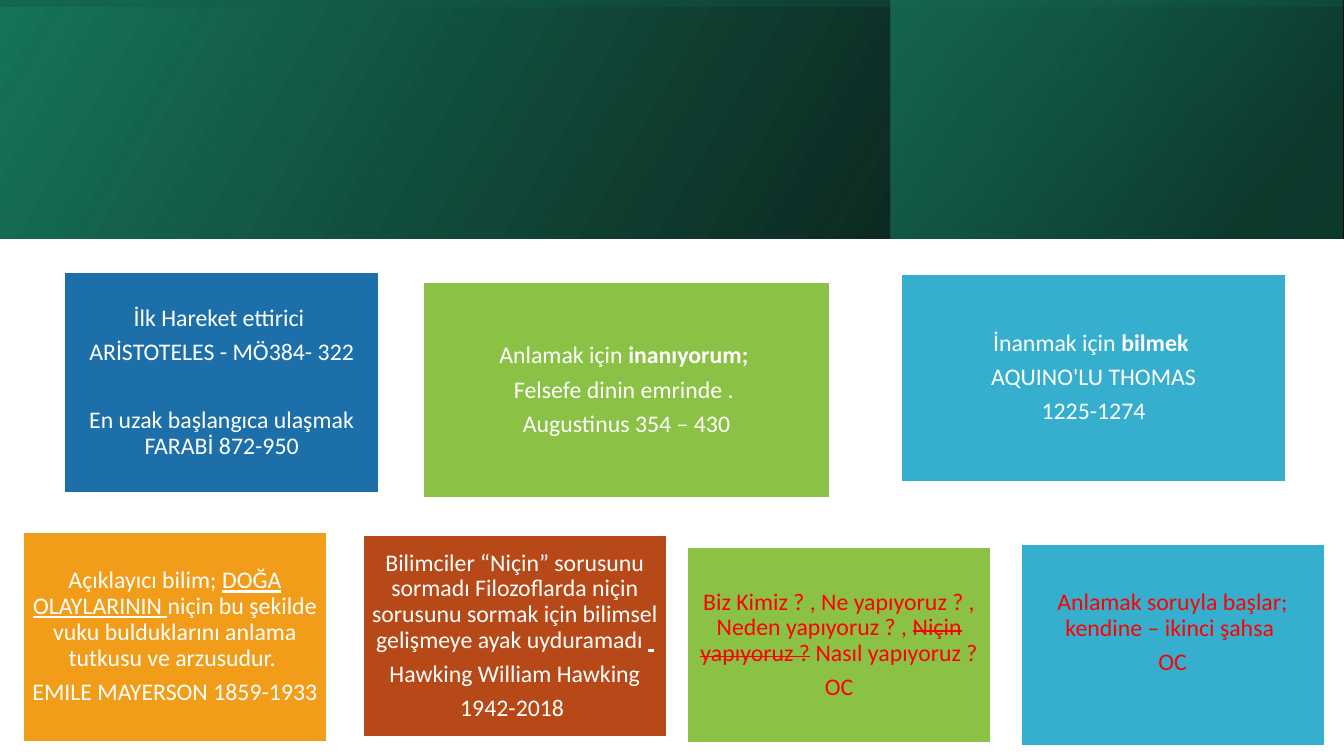
"""Builds a slide of seven coloured thinker cards under a green gradient banner."""
from lxml import etree
from pptx import Presentation
from pptx.dml.color import RGBColor
from pptx.enum.shapes import MSO_SHAPE
from pptx.enum.text import MSO_ANCHOR, PP_ALIGN
from pptx.oxml.ns import qn
from pptx.util import Pt

RECT = MSO_SHAPE.RECTANGLE
MIDDLE = MSO_ANCHOR.MIDDLE
CENTER = PP_ALIGN.CENTER

WHITE = RGBColor(0xFF, 0xFF, 0xFF)
BLACK = RGBColor(0x00, 0x00, 0x00)
RED = RGBColor(0xFF, 0x00, 0x00)
GREEN = RGBColor(0x8B, 0xC1, 0x45)
CYAN = RGBColor(0x36, 0xAF, 0xCE)
BLUE = RGBColor(0x1D, 0x6F, 0xA9)
RUST = RGBColor(0xB7, 0x49, 0x19)
ORANGE = RGBColor(0xF1, 0x9D, 0x19)
TEAL = RGBColor(0x16, 0x74, 0x5A)
DARK_TEAL = RGBColor(0x0E, 0x4D, 0x3C)
LIGHT_TEAL = RGBColor(0x1D, 0x9A, 0x78)

SLIDE_W, SLIDE_H = 960, 540
BANNER_H = 170.6
LOWER_W = 216.8
BOLD, UNDERLINE, STRIKE = "bold", "underline", "strike"


class Deck:
    """Holds the text style and the current slide."""

    font = "Calibri"
    size = 17
    inset = 5
    gap = 6

    def __init__(self, prs):
        """Add a blank slide to the presentation."""
        self.s = prs.slides.add_slide(prs.slide_layouts[6])

    def rect(self, box):
        """Add a rectangle without shadow."""
        sp = self.s.shapes.add_shape(RECT, *(Pt(v) for v in box))
        sp.shadow.inherit = False
        return sp

    def band(self, box, angle, stops, rotation=0):
        """Add a mirrored band with a translucent two-stop gradient."""
        sp = self.rect(box)
        sp.line.fill.background()
        sp.rotation = rotation
        sp._element.spPr.find(qn("a:xfrm")).set("flipH", "1")
        sp.fill.gradient()
        sp.fill.gradient_angle = angle
        for stop, (position, color, _) in zip(sp.fill.gradient_stops, stops):
            stop.position = position
            stop.color.rgb = color
        colors = sp._element.spPr.iter(qn("a:srgbClr"))
        for clr, (_, _, opacity) in zip(list(colors), stops):
            alpha = etree.SubElement(clr, qn("a:alpha"))
            alpha.set("val", str(opacity * 1000))

    def card(self, box, fill, paragraphs, color=WHITE, extra_gap=None, lift=0):
        """Add a filled card; extra_gap maps a paragraph index to space after."""
        sp = self.rect(box)
        sp.fill.solid()
        sp.fill.fore_color.rgb = fill
        sp.line.color.rgb = WHITE
        sp.line.width = Pt(1)
        tf = sp.text_frame
        tf.word_wrap = True
        tf.vertical_anchor = MIDDLE
        tf.margin_left = tf.margin_right = tf.margin_top = Pt(self.inset)
        tf.margin_bottom = Pt(self.inset + lift)
        for i, runs in enumerate(paragraphs):
            p = tf.paragraphs[0] if i == 0 else tf.add_paragraph()
            p.alignment = CENTER
            p.line_spacing = 0.9
            p.space_after = Pt((extra_gap or {}).get(i, self.gap))
            for text, *marks in runs:
                self.run(p, text, color, marks)

    def run(self, p, text, color, marks):
        """Add one styled run."""
        r = p.add_run()
        r.text = text
        r.font.name = self.font
        r.font.size = Pt(self.size)
        r.font.color.rgb = color
        r.font.bold = BOLD in marks
        r.font.underline = UNDERLINE in marks
        if STRIKE in marks:
            r.font._element.set("strike", "sngStrike")


def main():
    """Build and save the slide."""
    prs = Presentation()
    prs.slide_width, prs.slide_height = Pt(SLIDE_W), Pt(SLIDE_H)
    deck = Deck(prs)

    deck.band((0, 0, SLIDE_W, BANNER_H), 30, [(0, BLACK, 96), (1, TEAL, 100)])
    deck.band((636.5, 0, 322.6, BANNER_H), 40,
              [(0.19, DARK_TEAL, 68), (1, LIGHT_TEAL, 48)])
    offset = (SLIDE_W - BANNER_H) / 2
    deck.band((offset, -offset, BANNER_H, SLIDE_W), 10,
              [(0.23, TEAL, 16), (0.99, BLACK, 45)], rotation=270)

    deck.card((302.6, 201.8, 290, 154), GREEN, [
        [("Anlamak için ",), ("inanıyorum; ", BOLD)],
        [("Felsefe dinin emrinde . ",)],
        [("Augustinus 354 – 430",)],
    ])
    deck.card((644, 196, 274.2, 148), CYAN, [
        [("İnanmak için ",), ("bilmek ", BOLD)],
        [("AQUINO'LU THOMAS",)],
        [("1225-1274",)],
    ])
    deck.card((46.2, 194.6, 224.4, 157), BLUE, [
        [("İlk Hareket ettirici ",)],
        [("ARİSTOTELES - MÖ384- 322",)],
        [("En uzak başlangıca ulaşmak FARABİ 872-950",)],
    ], extra_gap={1: 30.4})
    deck.card((259.4, 382.4, LOWER_W, 144), RUST, [
        [("Bilimciler “Niçin” sorusunu sormadı Filozoflarda niçin sorusunu "
          "sormak için bilimsel gelişmeye ayak uyduramadı ",), (" ", UNDERLINE)],
        [("Hawking William Hawking",)],
        [("1942-2018 ",)],
    ])
    deck.card((16.6, 380, LOWER_W, 149.8), ORANGE, [
        [("Açıklayıcı bilim; ",), ("DOĞA OLAYLARININ ", UNDERLINE),
         ("niçin bu şekilde vuku bulduklarını anlama tutkusu ve arzusudur. ",)],
        [("EMILE MAYERSON 1859-1933",)],
    ])
    deck.card((491, 391, LOWER_W, 139.6), GREEN, [
        [("Biz Kimiz ? , Ne yapıyoruz ? , Neden yapıyoruz ? , ",),
         ("Niçin yapıyoruz ?", STRIKE), (" Nasıl yapıyoruz ?",)],
        [("OC",)],
    ], color=RED)
    deck.card((729.2, 389, LOWER_W, 144), CYAN, [
        [("Anlamak soruyla başlar; kendine – ikinci şahsa ",)],
        [("OC",)],
    ], color=RED, lift=18)

    prs.save("out.pptx")


if __name__ == "__main__":
    main()
